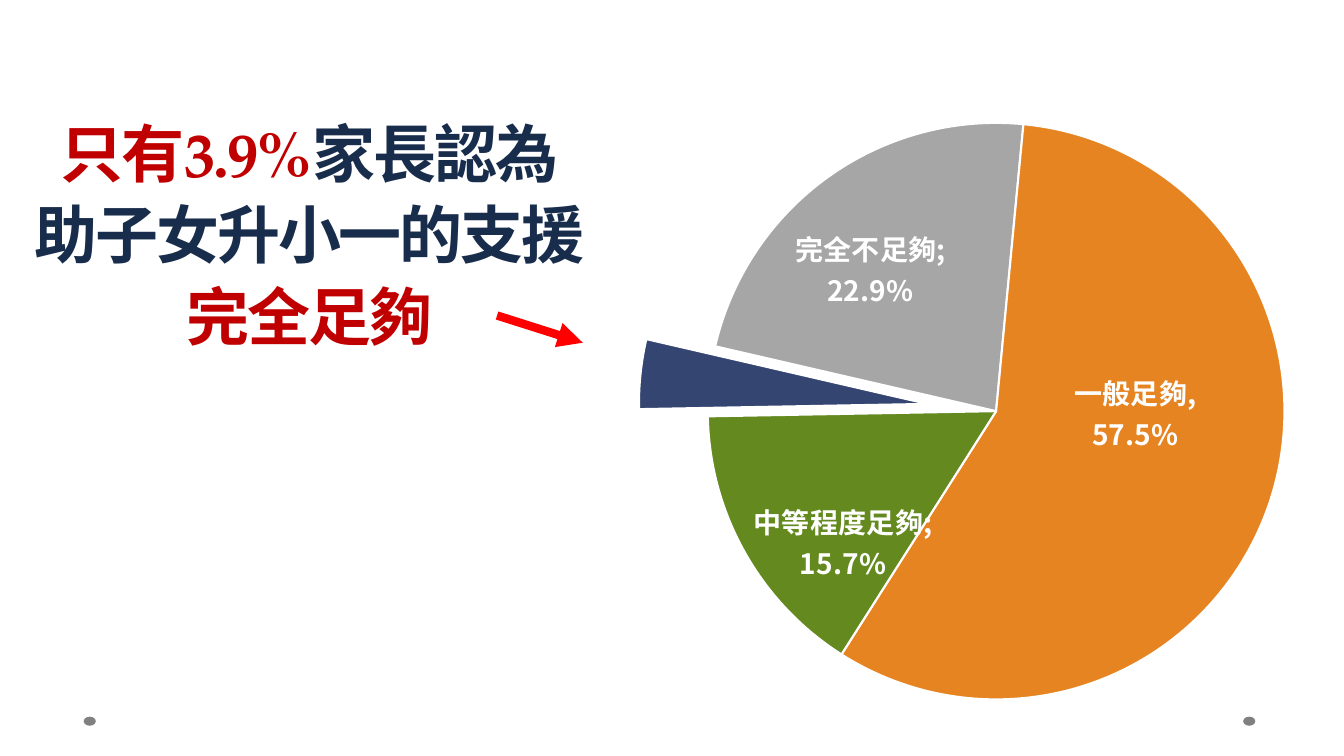
from dataclasses import dataclass

from lxml.etree import SubElement
from pptx import Presentation
from pptx.chart.data import CategoryChartData
from pptx.dml.color import RGBColor
from pptx.enum.chart import XL_CHART_TYPE, XL_LABEL_POSITION
from pptx.enum.shapes import MSO_CONNECTOR, MSO_SHAPE
from pptx.enum.text import MSO_ANCHOR, MSO_AUTO_SIZE, PP_ALIGN
from pptx.oxml import parse_xml
from pptx.oxml.ns import nsdecls, qn
from pptx.util import Inches, Pt

FONT = "TeX Gyre Pagella"
LABEL_FONT = "Noto Sans CJK TC"
COLORS = {
    "red": "C00000", "navy": "182C4B", "arrow": "FF0000", "dot": "808080",
    "white": "FFFFFF", "black": "000000", "grey": "A6A6A6",
    "orange": "E68422", "green": "63891F", "blue": "354571",
}
# Chart frame and pie, in inches
CHART_LEFT, CHART_TOP, CHART_WIDTH, CHART_HEIGHT = 4.2, 0.11, 10.92, 7.67
PIE_X, PIE_Y, PIE_RADIUS = 9.88, 4.08, 2.86


@dataclass
class Slice:
    name: str
    value: float
    color: str
    mark: str = ""       # punctuation after the name; none means no label
    dx: float = 0        # label shift in inches
    dy: float = 0
    explosion: int = 0


SLICES = [
    Slice("完全不足夠", 0.229, "grey", ";", -0.41, -0.25),
    Slice("一般足夠", 0.575, "orange", ",", 0.03, -0.45),
    Slice("中等程度足夠", 0.157, "green", ";", -0.27, 0.6),
    Slice("完全足夠", 0.039, "blue", explosion=24),
]


def rgb(name: str) -> RGBColor:
    return RGBColor.from_string(COLORS[name])


def format_font(font, *, size: float, color: str, name: str = FONT,
                bold: bool = True) -> None:
    font.name = name
    font.size = Pt(size)
    font.bold = bold
    font.color.rgb = rgb(color)


def add_run(p, text: str, *, size: float, color: str, spacing: float = 0) -> None:
    r = p.add_run()
    r.text = text
    format_font(r.font, size=size, color=color)
    if spacing:
        r.font._element.set("spc", str(int(spacing * 100)))


def make_layout(x: float, y: float, **values: float):
    """Layout with x and y in inches, turned into shares of the chart."""
    layout = parse_xml(f'<c:layout {nsdecls("c")}><c:manualLayout/></c:layout>')
    values |= {"x": x / CHART_WIDTH, "y": y / CHART_HEIGHT}
    for tag in ("layoutTarget", "xMode", "yMode", "x", "y", "w", "h"):
        if tag in values:
            SubElement(layout[0], qn(f"c:{tag}")).set("val", str(values[tag]))
    return layout


def add_dot(slide, left: float) -> None:
    sp = slide.shapes.add_shape(MSO_SHAPE.OVAL, Inches(left), Inches(7.11),
                                Inches(0.12), Inches(0.09))
    sp.shadow.inherit = False
    sp.fill.solid()
    sp.fill.fore_color.rgb = rgb("dot")
    sp.line.fill.background()


def format_title(slide) -> None:
    sp = slide.shapes.title
    sp.left, sp.top, sp.width, sp.height = map(Inches, (0.18, 0.67, 5.78, 2.88))
    tf = sp.text_frame
    tf.word_wrap = True
    tf.auto_size = MSO_AUTO_SIZE.NONE
    tf.vertical_anchor = MSO_ANCHOR.BOTTOM
    p = tf.paragraphs[0]
    p.alignment = PP_ALIGN.CENTER
    p.line_spacing = Pt(58)
    style = {"size": 45, "spacing": -1.5}
    add_run(p, "只有3.9%", color="red", **style)
    add_run(p, "家長認為", color="navy", **style)
    p.add_line_break()
    add_run(p, "助子女升小一的支援", color="navy", **style)
    add_run(p, "完全足夠", color="red", **style)


def format_slice(point, item: Slice) -> None:
    point.format.fill.solid()
    point.format.fill.fore_color.rgb = rgb(item.color)
    point.format.line.color.rgb = rgb("white")
    point.format.line.width = Pt(1.5)
    if item.explosion:
        point.format._element.find(qn("c:spPr")).addprevious(parse_xml(
            f'<c:explosion {nsdecls("c")} val="{item.explosion}"/>'))
    if item.mark:
        label = point.data_label
        format_font(label.font, size=20, color="white", name=LABEL_FONT)
        label.position = XL_LABEL_POSITION.CENTER
        dLbl = label._dLbl
        for tag in ("showVal", "showCatName"):
            dLbl.find(qn(f"c:{tag}")).set("val", "1")
        SubElement(dLbl, qn("c:separator")).text = item.mark + "\n"
        dLbl.insert(1, make_layout(item.dx, item.dy))


def add_pie(slide) -> None:
    data = CategoryChartData(number_format="0.0%")
    data.categories = [item.name for item in SLICES]
    data.add_series("Series 1", [item.value for item in SLICES])
    frame = map(Inches, (CHART_LEFT, CHART_TOP, CHART_WIDTH, CHART_HEIGHT))
    chart = slide.shapes.add_chart(XL_CHART_TYPE.PIE, *frame, data).chart
    chart.has_title = False
    chart.has_legend = False
    format_font(chart.font, size=10, color="black", bold=False)
    plot = chart.plots[0]
    plot.vary_by_categories = True
    series = plot.series[0]
    series.data_labels.show_value = False
    for i, item in enumerate(SLICES):
        format_slice(series.points[i], item)

    # Rotation and plot position
    pie = plot._element
    for old in pie.findall(qn("c:firstSliceAng")):
        pie.remove(old)
    SubElement(pie, qn("c:firstSliceAng")).set("val", "283")
    area = pie.getparent()
    for old in area.findall(qn("c:layout")):
        area.remove(old)
    area.insert(0, make_layout(
        PIE_X - PIE_RADIUS - CHART_LEFT, PIE_Y - PIE_RADIUS - CHART_TOP,
        layoutTarget="inner", xMode="edge", yMode="edge",
        w=2 * PIE_RADIUS / CHART_WIDTH, h=2 * PIE_RADIUS / CHART_HEIGHT))


def add_arrow(slide) -> None:
    arrow = slide.shapes.add_connector(MSO_CONNECTOR.STRAIGHT, Inches(4.93),
                                       Inches(3.13), Inches(5.78), Inches(3.4))
    arrow.line.color.rgb = rgb("arrow")
    arrow.line.width = Pt(6)
    SubElement(arrow.line._get_or_add_ln(), qn("a:tailEnd")).set("type", "triangle")
    SubElement(arrow._element.spPr, qn("a:effectLst"))


def main() -> None:
    prs = Presentation()
    prs.slide_width, prs.slide_height = Inches(13.33), Inches(7.5)
    slide = prs.slides.add_slide(prs.slide_layouts[5])

    # Footer dots
    for left in (12.33, 0.83):
        add_dot(slide, left)

    # Headline, pie and pointer to the smallest slice
    format_title(slide)
    add_pie(slide)
    add_arrow(slide)
    prs.save("out.pptx")


if __name__ == "__main__":
    main()
